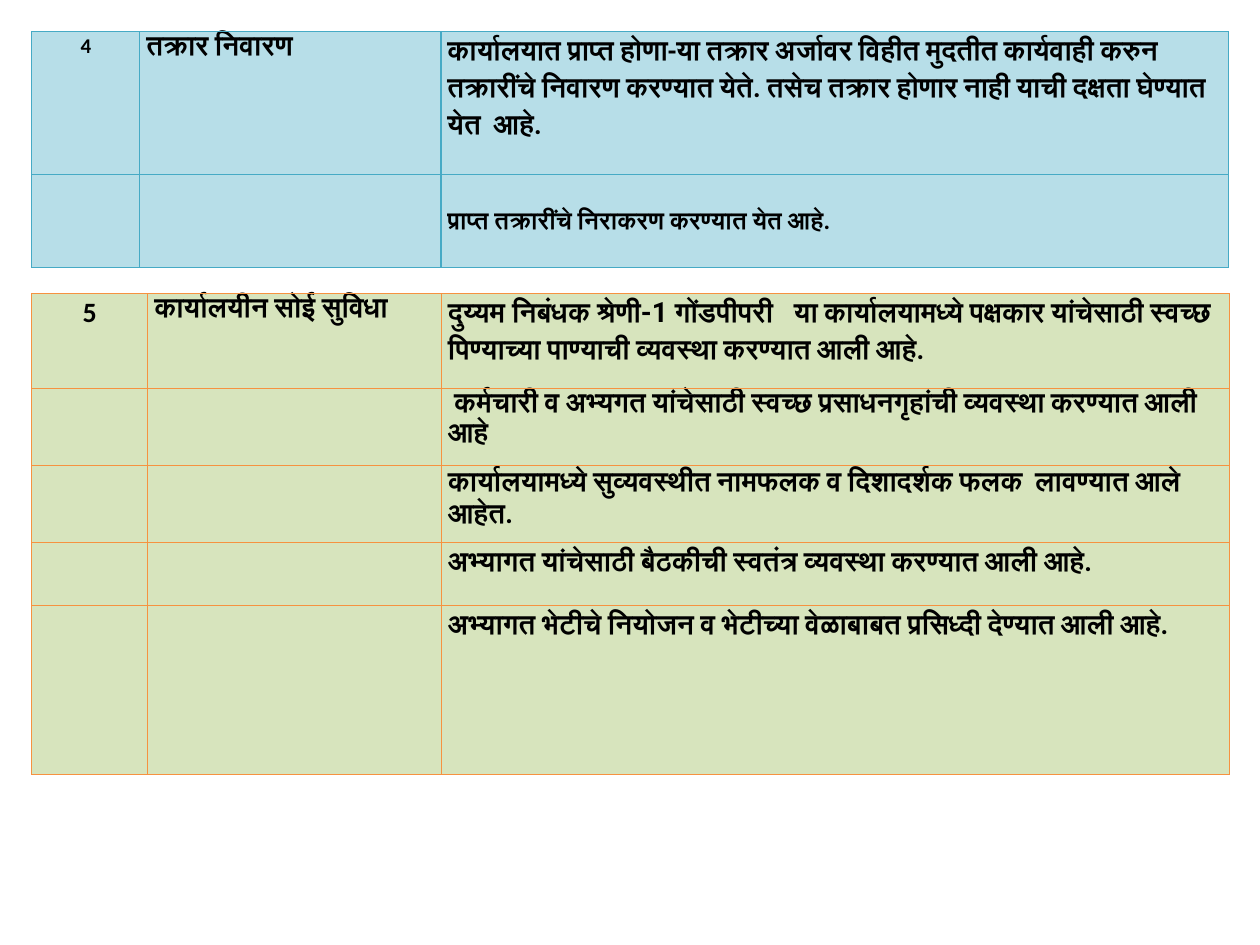
from dataclasses import dataclass

from pptx import Presentation
from pptx import util as u
from pptx.dml import color
from pptx.enum import text
from pptx.oxml import ns, parse_xml

Cm, Pt = u.Cm, u.Pt
MAIN = ns.nsdecls("a")


@dataclass
class Cell:
    words: str
    size: float = 16
    align: int = text.PP_ALIGN.LEFT
    lead: float = 1.07
    inset: float = 0
    intro: str = ""


@dataclass
class Grid:
    top: float
    cols: list
    rows: list
    fill: str
    edge: str
    cells: dict


def rgb(code: str) -> color.RGBColor:
    return color.RGBColor.from_string(code)


def assign(item, form: dict) -> None:
    for key, value in form.items():
        setattr(item, key, value)


def border(cell, code: str) -> None:
    props = cell._tc.get_or_add_tcPr()
    for spot, side in enumerate(("lnL", "lnR", "lnT", "lnB")):
        props.insert(spot, parse_xml(
            f'<a:{side} {MAIN} w="{Pt(0.75)}"><a:solidFill>'
            f'<a:srgbClr val="{code}"/></a:solidFill></a:{side}>'))


def add_run(para, words: str, face: str, size: float) -> None:
    run = para.add_run()
    run.text = words
    assign(run.font, {"name": face, "size": Pt(size), "bold": True})
    run.font.color.rgb = rgb("000000")
    run.font._element.append(parse_xml(f'<a:cs {MAIN} typeface="{face}"/>'))


def write(cell, item: Cell) -> None:
    cell.margin_top = Cm(item.inset)
    para = cell.text_frame.paragraphs[0]
    assign(para, {"alignment": item.align, "line_spacing": item.lead})
    if item.intro:
        add_run(para, item.intro, "Roboto", item.size)
    add_run(para, item.words, "Calibri", item.size)


def draw(slide, grid: Grid) -> None:
    frame = slide.shapes.add_table(
        len(grid.rows), len(grid.cols), Cm(0.64), Cm(grid.top),
        Cm(sum(grid.cols)), Cm(sum(grid.rows)))
    table = frame.table
    assign(table, {"first_row": False, "horz_banding": False})
    for col, width in zip(table.columns, grid.cols):
        col.width = Cm(width)
    for row, height in zip(table.rows, grid.rows):
        row.height = Cm(height)
    for r in range(len(grid.rows)):
        for c in range(len(grid.cols)):
            cell = table.cell(r, c)
            assign(cell, {"margin_left": Cm(0.13), "margin_right": Cm(0.13),
                          "margin_top": 0, "margin_bottom": 0})
            cell.fill.solid()
            cell.fill.fore_color.rgb = rgb(grid.fill)
            border(cell, grid.edge)
            if (r, c) in grid.cells:
                write(cell, grid.cells[r, c])


MID = text.PP_ALIGN.CENTER
TIGHT = 0.88

grids = [
    Grid(0.64, [2.18, 6.07, 15.88], [2.87, 1.88], "B7DEE8", "46AAC5", {
        (0, 0): Cell("4", 12, MID),
        (0, 1): Cell("तक्रार निवारण", lead=TIGHT),
        (0, 2): Cell("कार्यालयात प्राप्त होणा-या तक्रार अर्जावर विहीत मुदतीत कार्यवाही करुन "
                     "तक्रारींचे निवारण करण्यात येते. तसेच तक्रार होणार नाही याची दक्षता "
                     "घेण्यात येत  आहे."),
        (1, 2): Cell("प्राप्त तक्रारींचे निराकरण करण्यात येत आहे.", 14, inset=0.6),
    }),
    Grid(5.92, [2.34, 5.92, 15.88], [1.91, 1.55, 1.55, 1.28, 3.4], "D7E4BD", "F69240", {
        (0, 0): Cell("5", align=MID),
        (0, 1): Cell("कार्यालयीन सोई सुविधा", lead=TIGHT),
        (0, 2): Cell("या कार्यालयामध्ये पक्षकार यांचेसाठी स्वच्छ पिण्याच्या पाण्याची "
                     "व्यवस्था करण्यात आली आहे.", intro="दुय्यम निबंधक श्रेणी-1 गोंडपीपरी   "),
        (1, 2): Cell(" कर्मचारी व अभ्यगत यांचेसाठी स्वच्छ प्रसाधनगृहांची व्यवस्था "
                     "करण्यात आली आहे", lead=TIGHT),
        (2, 2): Cell("कार्यालयामध्ये सुव्यवस्थीत नामफलक व दिशादर्शक फलक  लावण्यात आले "
                     "आहेत.", lead=0.95),
        (3, 2): Cell("अभ्यागत यांचेसाठी बैठकीची स्वतंत्र व्यवस्था करण्यात आली आहे."),
        (4, 2): Cell("अभ्यागत भेटीचे नियोजन व भेटीच्या वेळाबाबत प्रसिध्दी देण्यात आली आहे."),
    }),
]

deck = Presentation()
assign(deck, {"slide_width": Cm(25.4), "slide_height": Cm(19.05)})
page = deck.slides.add_slide(deck.slide_layouts[6])
for grid in grids:
    draw(page, grid)
deck.save("out.pptx")
